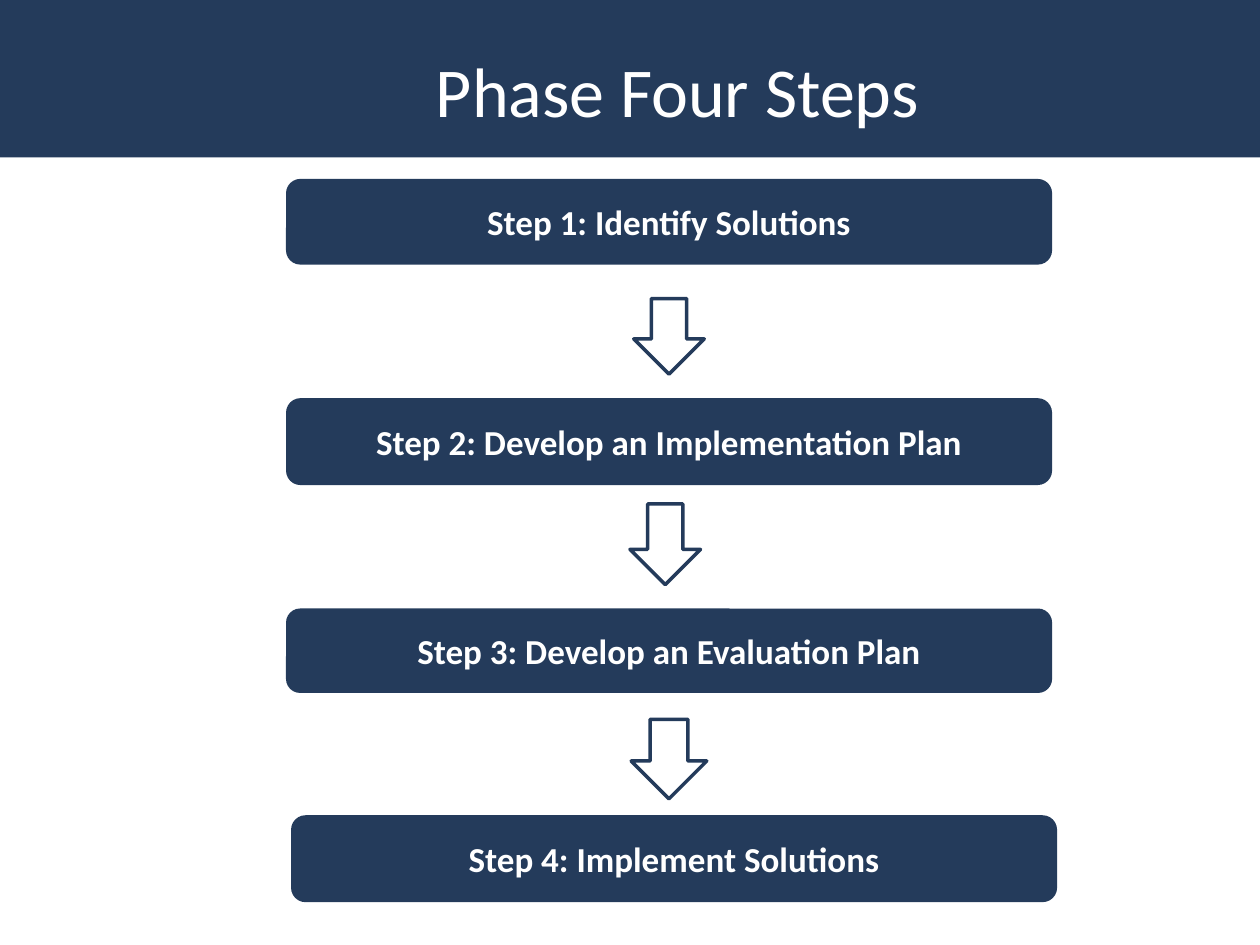
import dataclasses

import pptx
import pptx.dml.color
import pptx.enum.shapes
import pptx.enum.text
import pptx.util

Inches = pptx.util.Inches
Shapes = pptx.enum.shapes.MSO_SHAPE
Anchor = pptx.enum.text.MSO_ANCHOR


@dataclasses.dataclass(frozen=True)
class Theme:
    """Colours, font and type sizes of the slide."""
    navy: pptx.dml.color.RGBColor = pptx.dml.color.RGBColor(0x24, 0x3B, 0x5B)
    white: pptx.dml.color.RGBColor = pptx.dml.color.RGBColor(0xFF, 0xFF, 0xFF)
    font: str = "Calibri"
    title_size: pptx.util.Pt = pptx.util.Pt(40)
    step_size: pptx.util.Pt = pptx.util.Pt(20)
    arrow_line: pptx.util.Pt = pptx.util.Pt(2)


THEME = Theme()

STEPS = [
    ("Step 1: Identify Solutions", (2.27, 1.42, 6.08, 0.68)),
    ("Step 2: Develop an Implementation Plan", (2.27, 3.16, 6.08, 0.69)),
    ("Step 3: Develop an Evaluation Plan", (2.27, 4.83, 6.08, 0.67)),
    ("Step 4: Implement Solutions", (2.31, 6.47, 6.08, 0.69)),
]
ARROWS = [
    (5.03, 2.37, 0.56, 0.6),
    (5, 4, 0.56, 0.64),
    (5.01, 5.71, 0.6, 0.63),
]


def add_plain_shape(slide, kind, box):
    """Add a preset shape without shadow in a box given in inches."""
    shape = slide.shapes.add_shape(kind, *map(Inches, box))
    shape.shadow.inherit = False
    return shape


def add_filled_shape(slide, kind, box):
    """Add a navy shape without outline."""
    shape = add_plain_shape(slide, kind, box)
    shape.fill.solid()
    shape.fill.fore_color.rgb = THEME.navy
    shape.line.fill.background()
    return shape


def write_text(shape, text, size, bold, anchor):
    """Write one centred white line into a shape."""
    frame = shape.text_frame
    frame.word_wrap = True
    frame.vertical_anchor = anchor
    paragraph = frame.paragraphs[0]
    paragraph.alignment = pptx.enum.text.PP_ALIGN.CENTER
    run = paragraph.add_run()
    run.text = text
    run.font.name = THEME.font
    run.font.size = size
    run.font.bold = bold
    run.font.color.rgb = THEME.white


def add_header(slide, box):
    """Draw the header band and lay the title over it."""
    left, top, width, height = box
    add_filled_shape(slide, Shapes.RECTANGLE, box)
    title = slide.shapes.title
    title.left, title.top = Inches(left + 2.46), Inches(top + 0.33)
    title.width, title.height = Inches(width - 4.17), Inches(height - 0.48)
    write_text(title, "Phase Four Steps", THEME.title_size, False, Anchor.TOP)
    title.element.getparent().append(title.element)


def add_step(slide, text, box):
    """Draw one rounded step with its label."""
    step = add_filled_shape(slide, Shapes.ROUNDED_RECTANGLE, box)
    write_text(step, text, THEME.step_size, True, Anchor.MIDDLE)


def add_arrow(slide, box):
    """Draw one outlined arrow pointing to the next step."""
    arrow = add_plain_shape(slide, Shapes.DOWN_ARROW, box)
    arrow.fill.background()
    arrow.line.color.rgb = THEME.navy
    arrow.line.width = THEME.arrow_line


def main():
    """Build and save the slide."""
    presentation = pptx.Presentation()
    presentation.slide_width = Inches(10)
    presentation.slide_height = Inches(7.5)
    slide = presentation.slides.add_slide(presentation.slide_layouts[5])
    add_header(slide, (0, 0, 10, 1.25))
    for text, box in STEPS:
        add_step(slide, text, box)
    for box in ARROWS:
        add_arrow(slide, box)
    presentation.save("out.pptx")


if __name__ == "__main__":
    main()
